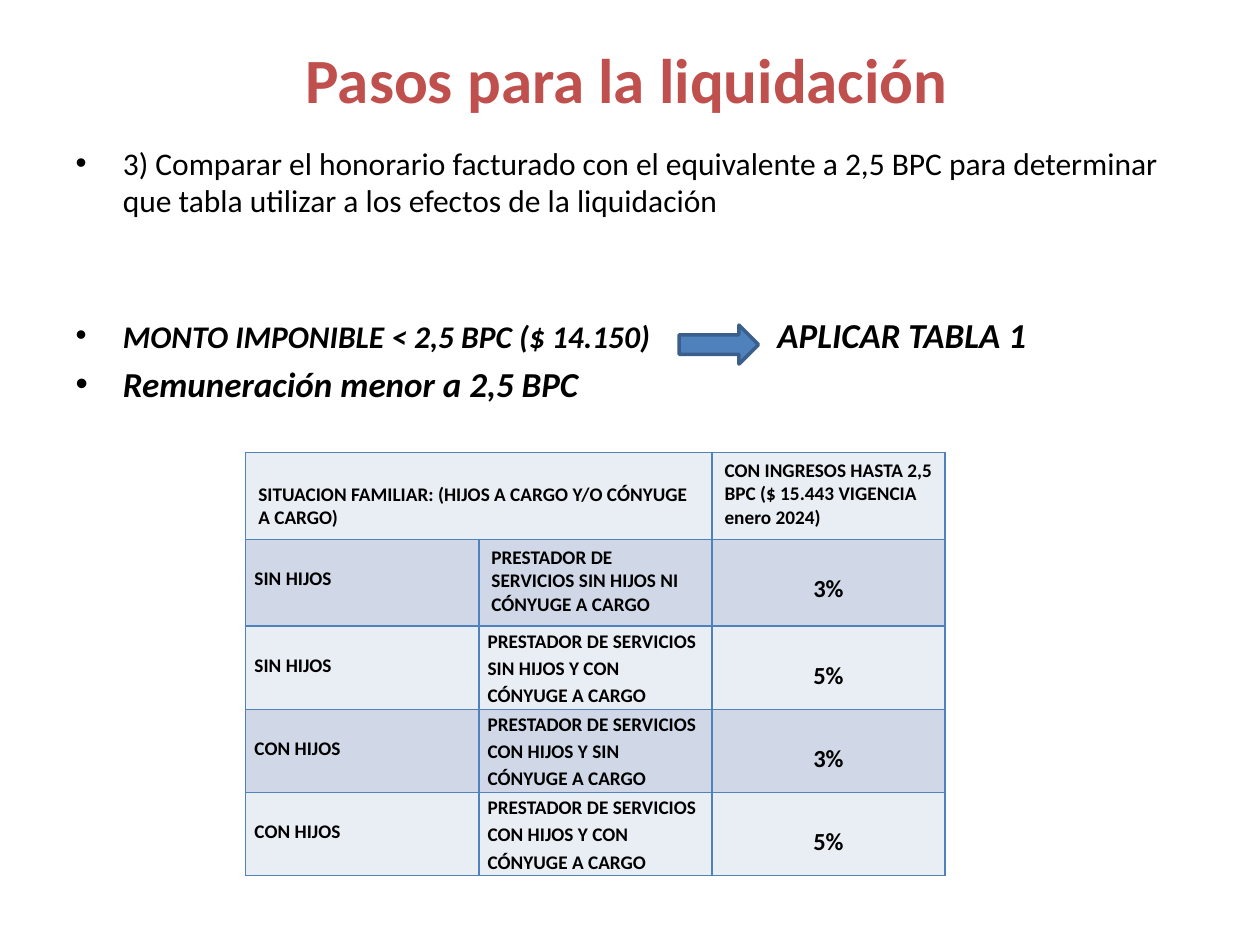
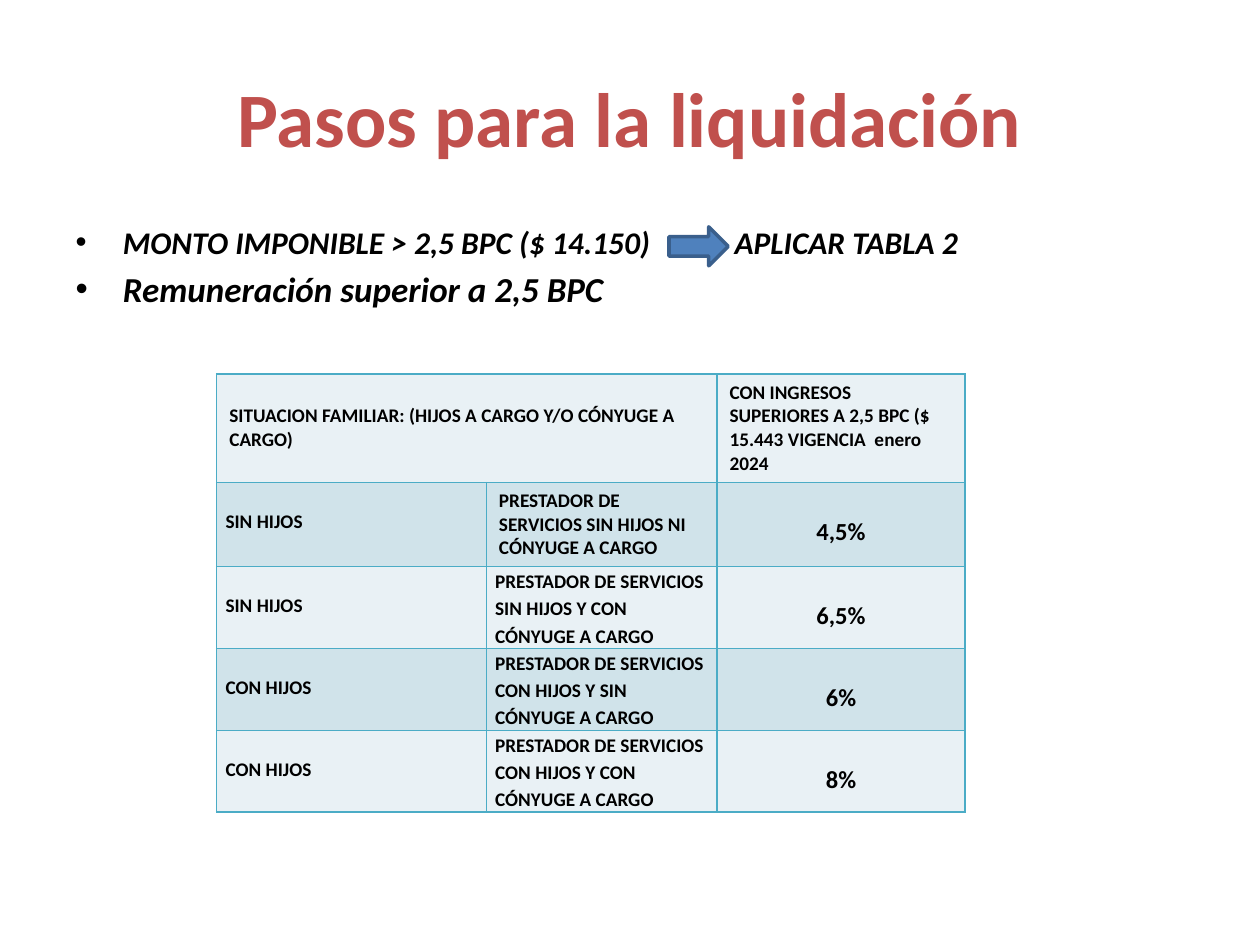
import pptx
import pptx.util
import pptx.dml.color
import pptx.enum.shapes
import pptx.enum.text
import pptx.oxml
import pptx.oxml.ns
from lxml import etree

Inches, Pt = pptx.util.Inches, pptx.util.Pt
ALIGN = pptx.enum.text.PP_ALIGN
FONT = "Calibri"
COLORS = {"title": "C0504D", "text": "000000", "arrow": "4F81BD", "arrow_line": "3A5F8C"}
BLUE = {"border": "4F81BD", "light": "E9EDF4", "dark": "D0D8E8"}
AQUA = {"border": "4BACC6", "light": "E9F1F5", "dark": "D0E3EA"}

TITLE = "Pasos para la liquidación"
FAMILY = "SITUACION FAMILIAR: (HIJOS A CARGO Y/O CÓNYUGE A CARGO)"
CASES = [
    ("SIN HIJOS", "SIN HIJOS NI CÓNYUGE A CARGO"),
    ("SIN HIJOS", "SIN HIJOS Y CON CÓNYUGE A CARGO"),
    ("CON HIJOS", "CON HIJOS Y SIN CÓNYUGE A CARGO"),
    ("CON HIJOS", "CON HIJOS Y CON CÓNYUGE A CARGO"),
]


def rgb(value):
    return pptx.dml.color.RGBColor.from_string(value)


def add_text(p, text, size=18, color=COLORS["text"], bold=False, italic=False):
    """Add one formatted run to a paragraph."""
    r = p.add_run()
    r.text = text
    r.font.name, r.font.size = FONT, Pt(size)
    r.font.bold, r.font.italic = bold, italic
    r.font.color.rgb = rgb(color)
    return r


def set_tab(p, position):
    tabs = etree.SubElement(p._p.get_or_add_pPr(), pptx.oxml.ns.qn("a:tabLst"))
    etree.SubElement(tabs, pptx.oxml.ns.qn("a:tab"), pos=str(Inches(position)), algn="l")


def set_borders(cell, color):
    tcPr = cell._tc.get_or_add_tcPr()
    for i, side in enumerate(("lnL", "lnR", "lnT", "lnB")):
        tcPr.insert(i, pptx.oxml.parse_xml(
            f'<a:{side} {pptx.oxml.ns.nsdecls("a")} w="{Pt(1)}"><a:solidFill>'
            f'<a:srgbClr val="{color}"/></a:solidFill></a:{side}>'))


class Deck:
    def __init__(self):
        self.prs = pptx.Presentation()
        self.prs.slide_width, self.prs.slide_height = Inches(10), Inches(7.5)
        self.s = None

    def new_slide(self):
        self.s = self.prs.slides.add_slide(self.prs.slide_layouts[1])

    def place(self, sp, box):
        sp.left, sp.top, sp.width, sp.height = map(Inches, box)
        tf = sp.text_frame
        tf.word_wrap = True
        tf.auto_size = pptx.enum.text.MSO_AUTO_SIZE.NONE
        return tf

    def title(self, box, size):
        tf = self.place(self.s.shapes.title, box)
        tf.vertical_anchor = pptx.enum.text.MSO_ANCHOR.MIDDLE
        p = tf.paragraphs[0]
        p.alignment = ALIGN.CENTER
        add_text(p, TITLE, size, COLORS["title"], bold=True)

    def bullets(self, box, items, top=0.05):
        """Each item is (space before, tab stop or None, runs of text and format)."""
        tf = self.place(self.s.placeholders[1], box)
        tf.margin_top = Inches(top)
        for i, (space, tab, runs) in enumerate(items):
            p = tf.add_paragraph() if i else tf.paragraphs[0]
            p.space_before = Pt(space)
            if tab:
                set_tab(p, tab)
            for text, style in runs:
                add_text(p, text, **style)

    def arrow(self, box):
        sp = self.s.shapes.add_shape(pptx.enum.shapes.MSO_SHAPE.RIGHT_ARROW, *map(Inches, box))
        sp.shadow.inherit = False
        sp.fill.solid()
        sp.fill.fore_color.rgb = rgb(COLORS["arrow"])
        sp.line.color.rgb = rgb(COLORS["arrow_line"])
        sp.line.width = Pt(2)

    def cell(self, cell, text, top=0.05, side=0.1, bottom=0.05, size=11, spacing=1, align=ALIGN.LEFT):
        cell.margin_left = cell.margin_right = Inches(side)
        cell.margin_top, cell.margin_bottom = Inches(top), Inches(bottom)
        p = cell.text_frame.paragraphs[0]
        p.alignment, p.line_spacing = align, spacing
        add_text(p, text, size, bold=True)

    def rate_table(self, left, top, widths, heights, income, rates, palette):
        box = map(Inches, (left, top, sum(widths), sum(heights)))
        table = self.s.shapes.add_table(len(heights), len(widths), *box).table
        for column, width in zip(table.columns, widths):
            column.width = Inches(width)
        for i, (row, height) in enumerate(zip(table.rows, heights)):
            row.height = Inches(height)
            for cell in row.cells:
                cell.fill.solid()
                cell.fill.fore_color.rgb = rgb(palette["dark" if i % 2 else "light"])
                set_borders(cell, palette["border"])
        # Header row
        table.cell(0, 0).merge(table.cell(0, 1))
        self.cell(table.cell(0, 0), FAMILY, top=0.24)
        self.cell(table.cell(0, 2), income)
        # One row per family case
        tight = dict(side=0.07, bottom=0, spacing=1.15)
        for i, ((children, case), rate) in enumerate(zip(CASES, rates), 1):
            self.cell(table.cell(i, 0), children, top=0.19, **tight)
            style = {} if i == 1 else dict(top=0, **tight)
            self.cell(table.cell(i, 1), "PRESTADOR DE SERVICIOS " + case, **style)
            self.cell(table.cell(i, 2), rate, top=0.24, size=14, align=ALIGN.CENTER, **tight)


def main():
    deck = Deck()
    strong = dict(bold=True, italic=True)
    large = dict(size=20, **strong)

    # Slide 1: income up to 2,5 BPC
    deck.new_slide()
    deck.title((0.5, 0.23, 8.95, 0.78), 36)
    deck.bullets((0.5, 1.09, 9, 5.86), [
        (1, None, [("3) Comparar el honorario facturado con el equivalente a 2,5 BPC para "
                    "determinar que tabla utilizar a los efectos de la liquidación", {})]),
        (54, 5.57, [("MONTO IMPONIBLE < 2,5 BPC ($ 14.150)\t", strong), ("APLICAR TABLA 1", large)]),
        (4, None, [("Remuneración menor a 2,5 BPC", large)]),
    ])
    deck.rate_table(1.95, 3.59, [1.85] * 3, [0.69] * 2 + [0.66] * 3,
                    "CON INGRESOS HASTA 2,5 BPC ($ 15.443 VIGENCIA enero 2024)",
                    ["3%", "5%", "3%", "5%"], BLUE)
    deck.arrow((5.39, 2.58, 0.63, 0.31))

    # Slide 2: income above 2,5 BPC
    deck.new_slide()
    deck.title((0.5, 0.3, 9, 1.25), 44)
    deck.bullets((0.5, 1.33, 9, 5.37), [
        (0, 5.23, [("MONTO IMPONIBLE > 2,5 BPC ($ 14.150)\tAPLICAR TABLA 2", strong)]),
        (4, None, [("Remuneración superior a 2,5 BPC", large)]),
    ], top=0.44)
    deck.arrow((5.31, 1.8, 0.47, 0.31))
    deck.rate_table(1.72, 2.97, [2.14, 1.83, 1.97], [0.86, 0.66] + [0.65] * 3,
                    "CON INGRESOS SUPERIORES A 2,5 BPC ($ 15.443 VIGENCIA  enero 2024",
                    ["4,5%", "6,5%", "6%", "8%"], AQUA)

    deck.prs.save("out.pptx")


if __name__ == "__main__":
    main()
